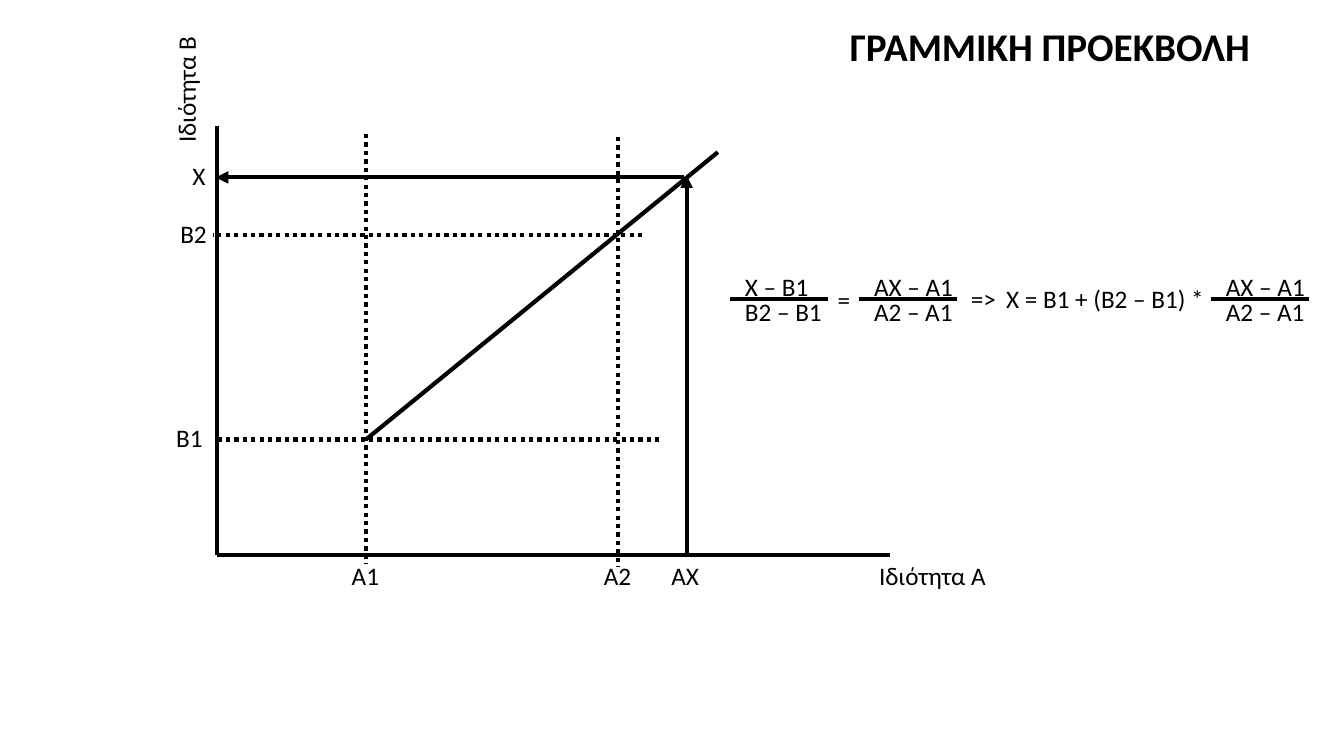
"""Build the linear extrapolation slide."""
from dataclasses import dataclass

import pptx
import pptx.dml.color
import pptx.enum.dml
import pptx.enum.shapes
import pptx.enum.text
import pptx.oxml
import pptx.oxml.ns
import pptx.slide
import pptx.util

PX = 9144
BLACK = pptx.dml.color.RGBColor(0, 0, 0)
FONT = "Calibri"
LABEL_HEIGHT = 40


@dataclass(frozen=True)
class Label:
    text: str
    left: int
    top: int
    width: int
    height: int = LABEL_HEIGHT
    size: int = 18
    bold: bool = False
    rotation: int = 0


@dataclass(frozen=True)
class Line:
    x1: int
    y1: int
    x2: int
    y2: int
    dotted: bool = False
    arrow: bool = False


@dataclass(frozen=True)
class Fraction:
    numerator: str
    denominator: str
    left: int
    numerator_width: int
    denominator_width: int


GRAPH_LINES = [
    Line(215, 125, 215, 551),
    Line(883, 551, 215, 551),
    Line(363, 133, 363, 559, dotted=True),
    Line(613, 136, 613, 562, dotted=True),
    Line(654, 436, 214, 436, dotted=True),
    Line(637, 233, 211, 233, dotted=True),
    Line(712, 151, 363, 436),
    Line(681, 174, 681, 552, arrow=True),
    Line(214, 176, 678, 176, arrow=True),
]

LABELS = [
    Label("Ιδιότητα Α", 862, 551, 127),
    Label("Ιδιότητα Β", 121, 68, 127, rotation=270),
    Label("Α1", 339, 551, 48),
    Label("Α2", 589, 551, 48),
    Label("ΑΧ", 656, 551, 48),
    Label("Β1", 165, 414, 47),
    Label("Β2", 169, 212, 47),
    Label("Χ", 181, 154, 33),
    Label("=", 821, 277, 33),
    Label("=>", 953, 276, 45),
    Label("Χ = Β1 + (Β2 – Β1) *", 988, 276, 225),
    Label("ΓΡΑΜΜΙΚΗ ΠΡΟΕΚΒΟΛΗ", 833, 17, 421, height=57, size=28, bold=True),
]

FRACTIONS = [
    Fraction("Χ – Β1", "Β2 – Β1", 729, 84, 97),
    Fraction("ΑΧ – Α1", "Α2 – Α1", 857, 99, 99),
    Fraction("ΑΧ – Α1", "Α2 – Α1", 1206, 99, 99),
]


def px(length: int) -> pptx.util.Emu:
    """Turn px into EMU."""
    return pptx.util.Emu(length * PX)


def draw_line(slide: pptx.slide.Slide, line: Line) -> None:
    """Draw a straight black line, dotted or with an arrowhead at its start."""
    connector = slide.shapes.add_connector(
        pptx.enum.shapes.MSO_CONNECTOR.STRAIGHT,
        px(line.x1), px(line.y1), px(line.x2), px(line.y2),
    )
    connector.line.color.rgb = BLACK
    connector.line.width = pptx.util.Pt(3)
    if line.dotted:
        connector.line.dash_style = pptx.enum.dml.MSO_LINE.ROUND_DOT
    properties = connector.line._get_or_add_ln()
    if line.arrow:
        head = pptx.oxml.parse_xml(
            f'<a:headEnd {pptx.oxml.ns.nsdecls("a")} type="triangle"/>'
        )
        properties.append(head)
    effects = pptx.oxml.parse_xml(f'<a:effectLst {pptx.oxml.ns.nsdecls("a")}/>')
    properties.addnext(effects)


def draw_label(slide: pptx.slide.Slide, label: Label) -> None:
    """Write one line of text in a box that fits it."""
    shape = slide.shapes.add_textbox(
        px(label.left), px(label.top), px(label.width), px(label.height)
    )
    shape.rotation = label.rotation
    text_frame = shape.text_frame
    text_frame.word_wrap = False
    text_frame.auto_size = pptx.enum.text.MSO_AUTO_SIZE.SHAPE_TO_FIT_TEXT
    text_frame.text = label.text
    font = text_frame.paragraphs[0].runs[0].font
    font.name = FONT
    font.size = pptx.util.Pt(label.size)
    font.bold = label.bold
    font.color.rgb = BLACK


def draw_fraction(slide: pptx.slide.Slide, fraction: Fraction) -> None:
    """Write a numerator and a denominator with a bar between them."""
    left = fraction.left
    draw_label(slide, Label(fraction.numerator, left, 264, fraction.numerator_width))
    draw_label(slide, Label(fraction.denominator, left, 289, fraction.denominator_width))
    draw_line(slide, Line(left + 92, 297, left - 5, 297))


def main() -> None:
    """Create the presentation and save it."""
    presentation = pptx.Presentation()
    presentation.slide_width = px(1333)
    presentation.slide_height = px(750)
    slide = presentation.slides.add_slide(presentation.slide_layouts[6])
    for line in GRAPH_LINES:
        draw_line(slide, line)
    for label in LABELS:
        draw_label(slide, label)
    for fraction in FRACTIONS:
        draw_fraction(slide, fraction)
    presentation.save("out.pptx")


if __name__ == "__main__":
    main()
